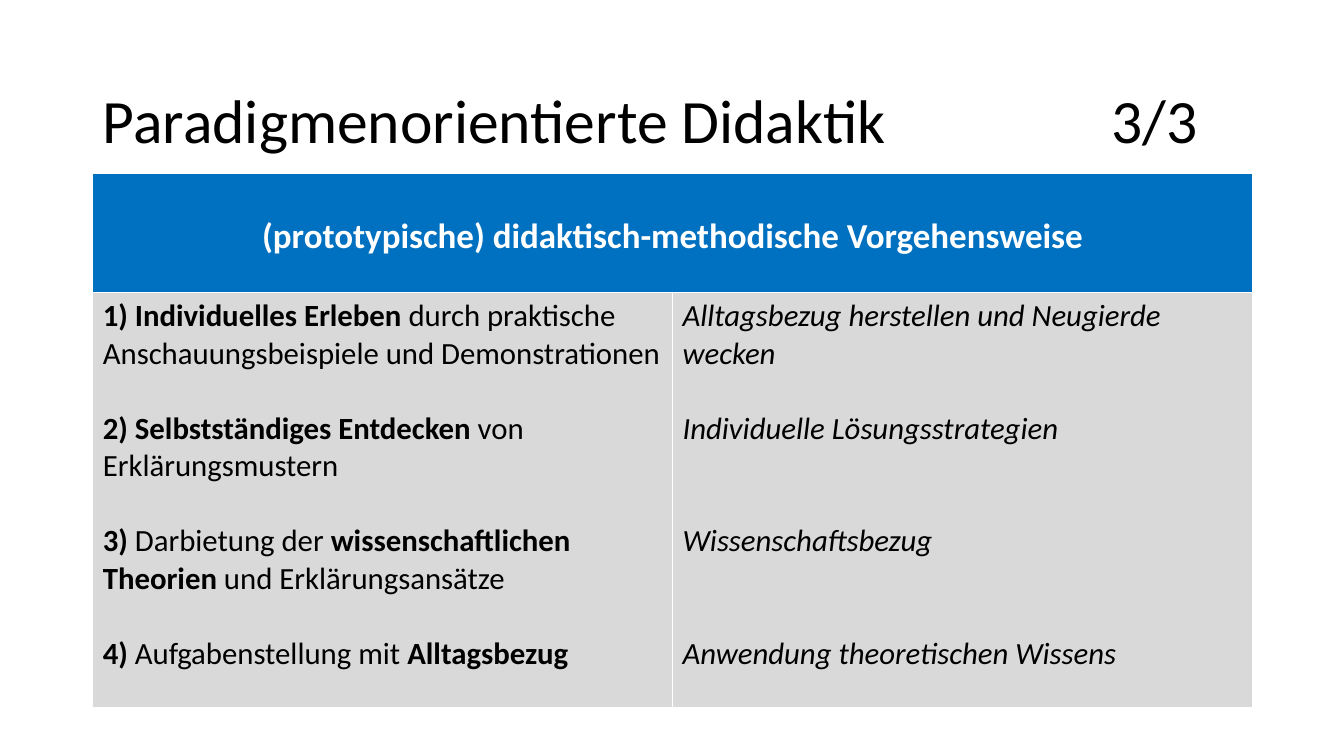
from dataclasses import dataclass

from lxml.etree import SubElement
from pptx import Presentation
from pptx.dml.color import RGBColor
from pptx.enum.text import MSO_ANCHOR, MSO_AUTO_SIZE, PP_ALIGN
from pptx.oxml.ns import qn
from pptx.util import Inches, Pt


@dataclass(frozen=True)
class Theme:
    font: str = "Calibri"
    black: RGBColor = RGBColor(0x00, 0x00, 0x00)
    white: RGBColor = RGBColor(0xFF, 0xFF, 0xFF)
    blue: RGBColor = RGBColor(0x00, 0x70, 0xC0)
    grey: RGBColor = RGBColor(0xD9, 0xD9, 0xD9)
    title: int = 44
    header: int = 25
    body: int = 22


theme = Theme()
LINE = theme.body * 1.22  # height of one body line in points


def add_run(p, text, size, color, bold=False, italic=False):
    r = p.add_run()
    r.text = text
    r.font.name = theme.font
    r.font.size = Pt(size)
    r.font.color.rgb = color
    r.font.bold = bold
    r.font.italic = italic


def fill_cell(cell, color):
    cell.fill.solid()
    cell.fill.fore_color.rgb = color


prs = Presentation()
prs.slide_width, prs.slide_height = Inches(13.33), Inches(7.5)
s = prs.slides.add_slide(prs.slide_layouts[5])

# Title with the part number at a tab stop
title = s.shapes.title
title.left, title.top = Inches(0.92), Inches(0.5)
title.width, title.height = Inches(11.5), Inches(1.45)
tf = title.text_frame
tf.word_wrap = True
tf.auto_size = MSO_AUTO_SIZE.NONE
tf.vertical_anchor = MSO_ANCHOR.MIDDLE
p = tf.paragraphs[0]
p.alignment = PP_ALIGN.LEFT
p.line_spacing = 0.9
tabs = SubElement(p._p.get_or_add_pPr(), qn("a:tabLst"))
SubElement(tabs, qn("a:tab"), pos=str(Inches(10)), algn="l")
add_run(p, "Paradigmenorientierte Didaktik\t3/3", theme.title, theme.black)

# Table; its default style draws the white rules
table = s.shapes.add_table(2, 2, Inches(0.92), Inches(1.72), Inches(11.5), Inches(5.3)).table
table.horz_banding = False
table.rows[0].height, table.rows[1].height = Inches(1.18), Inches(4.12)

# Header row across both columns
header = table.cell(0, 0)
header.merge(table.cell(0, 1))
fill_cell(header, theme.blue)
header.margin_top = Inches(0.42)
p = header.text_frame.paragraphs[0]
p.alignment = PP_ALIGN.CENTER
add_run(p, "(prototypische) didaktisch-methodische Vorgehensweise",
        theme.header, theme.white, bold=True)

# Steps: (blank lines above, [(text, bold), ...])
steps = [
    (0, [("1) Individuelles Erleben ", True),
         ("durch praktische Anschauungsbeispiele und Demonstrationen", False)]),
    (1, [("2) Selbstständiges Entdecken ", True), ("von Erklärungsmustern", False)]),
    (1, [("3) ", True), ("Darbietung der ", False),
         ("wissenschaftlichen Theorien ", True), ("und Erklärungsansätze", False)]),
    (1, [("4) ", True), ("Aufgabenstellung mit ", False), ("Alltagsbezug", True)]),
]
aims = [
    (0, [("Alltagsbezug herstellen und Neugierde wecken", False)]),
    (1, [("Individuelle Lösungsstrategien", False)]),
    (2, [("Wissenschaftsbezug", False)]),
    (2, [("Anwendung theoretischen Wissens", False)]),
]

# Body row: steps on the left, aims in italics on the right
for col, (entries, italic) in enumerate([(steps, False), (aims, True)]):
    cell = table.cell(1, col)
    fill_cell(cell, theme.grey)
    tf = cell.text_frame
    for i, (gap, runs) in enumerate(entries):
        p = tf.add_paragraph() if i else tf.paragraphs[0]
        p.space_before = Pt(gap * LINE)
        for text, bold in runs:
            add_run(p, text, theme.body, theme.black, bold, italic)

prs.save("out.pptx")
